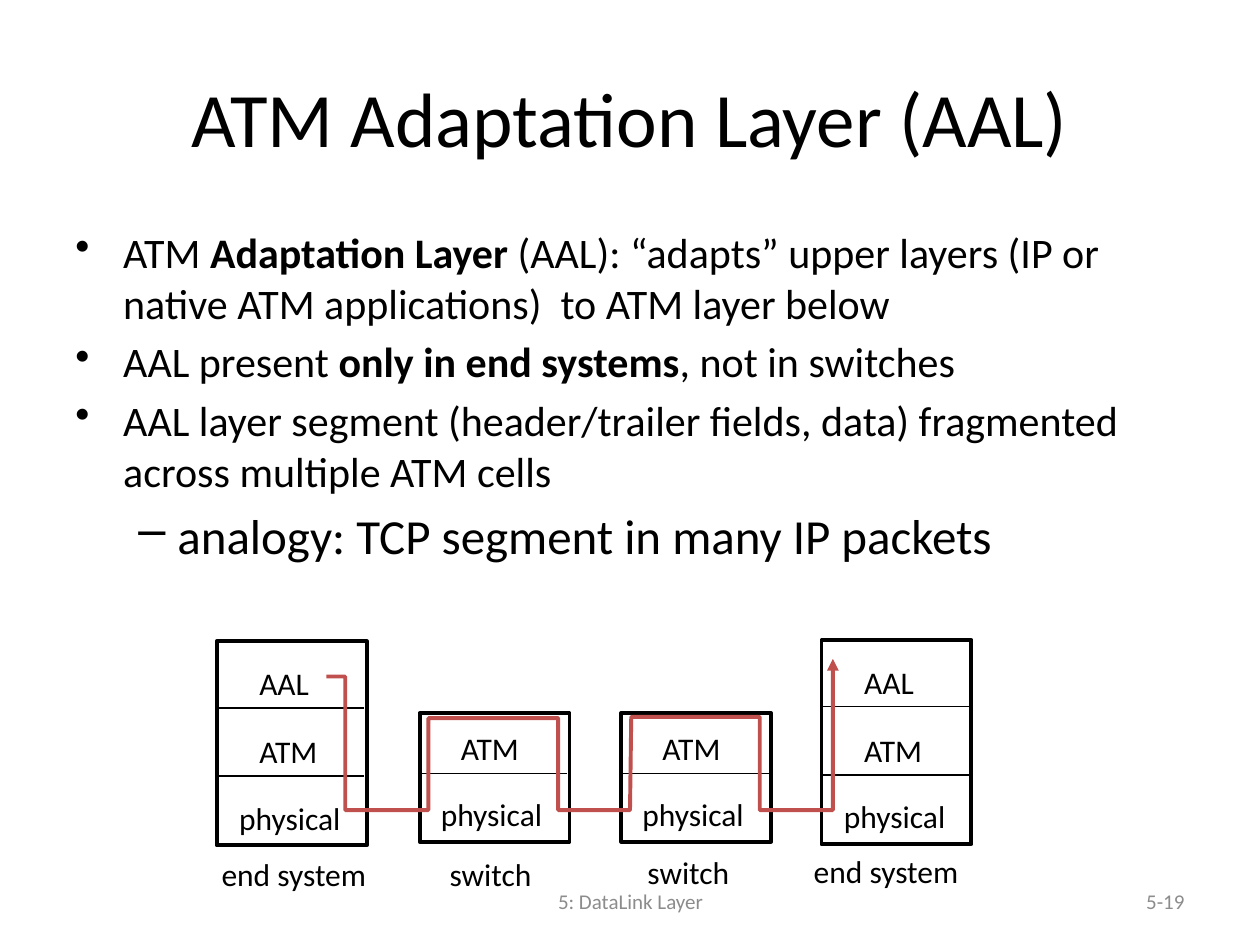
"""Build the ATM Adaptation Layer slide."""
from pptx import Presentation
from pptx.dml.color import RGBColor
from pptx.enum import shapes, text
from pptx.oxml.ns import qn
from pptx.util import Inches, Pt

BLACK, GREY, RED = "000000", "8C8C8C", "C0504D"
LEFT, CENTER, RIGHT = text.PP_ALIGN.LEFT, text.PP_ALIGN.CENTER, text.PP_ALIGN.RIGHT
TOP, MIDDLE = text.MSO_ANCHOR.TOP, text.MSO_ANCHOR.MIDDLE

HEADINGS = [
    ("5: DataLink Layer", (3.42, 6.95, 3.17, 0.4), 12, GREY, CENTER),
    ("5-19", (7.17, 6.95, 2.33, 0.4), 12, GREY, RIGHT),
    ("ATM Adaptation Layer (AAL)", (0.5, 0.3, 9, 1.25), 44, BLACK, CENTER),
]
# Odd-numbered pieces are bold.
BULLETS = [
    (["ATM ", "Adaptation Layer",
      " (AAL): “adapts” upper layers (IP or native ATM applications)  to ATM layer below"],
     0, "•", 24, 0.38, 0.38),
    (["AAL present ", "only in end systems", ", not in switches"], 0, "•", 24, 0.38, 0.38),
    (["AAL layer segment (header/trailer fields, data) fragmented across multiple ATM cells"],
     0, "•", 24, 0.38, 0.38),
    (["analogy: TCP segment in many IP packets"], 1, "–", 28, 0.81, 0.31),
]
END = {"height": 1.62, "rules": [0.53, 1.07],
       "layers": [("AAL", 0.24, 0.13, 0.7), ("ATM", 0.24, 0.67, 0.77),
                  ("physical", 0.08, 1.2, 1.13)]}
SWITCH = {"height": 1.02, "rules": [0.48],
          "layers": [("ATM", 0.23, 0.08, 0.77), ("physical", 0.07, 0.6, 1.13)]}
STACKS = [
    (END, 1.72, 5.09, "end system", (1.66, 6.74, 1.51, 0.4)),
    (END, 6.52, 5.08, "end system", (6.36, 6.71, 1.51, 0.4)),
    (SWITCH, 3.33, 5.66, "switch", (3.47, 6.74, 0.96, 0.4)),
    (SWITCH, 4.93, 5.66, "switch", (5.04, 6.72, 0.96, 0.4)),
]
STACK_WIDTH = 1.19
DATA_ROUTE = [(2.59, 5.37), (2.74, 5.37), (2.74, 6.43), (3.4, 6.43), (3.4, 5.7),
              (4.43, 5.7), (4.43, 6.43), (5, 6.43), (5.01, 5.69), (6.03, 5.69),
              (6.03, 6.43), (6.61, 6.43), (6.61, 5.23)]


def rgb(color):
    """Turn a hex string into a colour."""
    return RGBColor.from_string(color)


def style_run(r, size, color=BLACK, bold=False):
    """Set the font of a run."""
    r.font.name, r.font.size, r.font.bold = "Calibri", Pt(size), bold
    r.font.color.rgb = rgb(color)


def style_line(line, color, width):
    """Set the colour and width of a line."""
    line.color.rgb, line.width = rgb(color), Pt(width)


def add_text(s, content, box, size, color=BLACK, align=LEFT, anchor=TOP, wrap=False):
    """Add one line of text in a box."""
    tf = s.shapes.add_textbox(*map(Inches, box)).text_frame
    tf.text, tf.word_wrap, tf.vertical_anchor = content, wrap, anchor
    tf.auto_size = text.MSO_AUTO_SIZE.NONE if wrap else text.MSO_AUTO_SIZE.SHAPE_TO_FIT_TEXT
    p = tf.paragraphs[0]
    p.alignment = align
    style_run(p.runs[0], size, color)


def add_bullets(s):
    """Add the bulleted body text."""
    tf = s.shapes.add_textbox(*map(Inches, (0.5, 1.75, 9, 4.95))).text_frame
    tf.word_wrap = True
    for i, (pieces, level, mark, size, margin, hang) in enumerate(BULLETS):
        p = tf.add_paragraph() if i else tf.paragraphs[0]
        p.level, p.space_before = level, Pt(size * 0.2)
        pPr = p._p.get_or_add_pPr()
        pPr.set("marL", str(Inches(margin)))
        pPr.set("indent", str(-Inches(hang)))
        bullet = pPr.makeelement(qn("a:buChar"), {"char": mark})
        pPr.append(bullet)
        for j, piece in enumerate(pieces):
            r = p.add_run()
            r.text = piece
            style_run(r, size, bold=j % 2 == 1)


def add_stack(s, kind, left, top, label, label_box):
    """Add a protocol stack with its rules, layer names and label."""
    sp = s.shapes.add_shape(shapes.MSO_SHAPE.RECTANGLE, Inches(left), Inches(top),
                            Inches(STACK_WIDTH), Inches(kind["height"]))
    sp.shadow.inherit = False
    sp.fill.solid()
    sp.fill.fore_color.rgb = rgb("FFFFFF")
    style_line(sp.line, BLACK, 2.25)
    for rule in kind["rules"]:
        y = Inches(top + rule)
        cxn = s.shapes.add_connector(shapes.MSO_CONNECTOR.STRAIGHT,
                                     Inches(left + 1.17), y, Inches(left + 0.01), y)
        style_line(cxn.line, BLACK, 0.75)
        spPr = cxn._element.spPr
        spPr.append(spPr.makeelement(qn("a:effectLst"), {}))
    for name, dx, dy, width in kind["layers"]:
        add_text(s, name, (left + dx, top + dy, width, 0.4), 18)
    add_text(s, label, label_box, 18)


def add_route(s):
    """Add the path of the data through all the stacks."""
    start, *rest = [(Inches(x), Inches(y)) for x, y in DATA_ROUTE]
    builder = s.shapes.build_freeform(*start)
    builder.add_line_segments(rest, close=False)
    sp = builder.convert_to_shape()
    sp.shadow.inherit = False
    sp.fill.background()
    style_line(sp.line, RED, 2.25)
    ln = sp.line._get_or_add_ln()
    ln.append(ln.makeelement(qn("a:tailEnd"), {"type": "triangle"}))


def main():
    """Build and save the slide."""
    prs = Presentation()
    prs.slide_width, prs.slide_height = Inches(10), Inches(7.5)
    s = prs.slides.add_slide(prs.slide_layouts[6])
    for content, box, size, color, align in HEADINGS:
        add_text(s, content, box, size, color, align, MIDDLE, wrap=True)
    add_bullets(s)
    for stack in STACKS:
        add_stack(s, *stack)
    add_route(s)
    prs.save("out.pptx")


if __name__ == "__main__":
    main()
